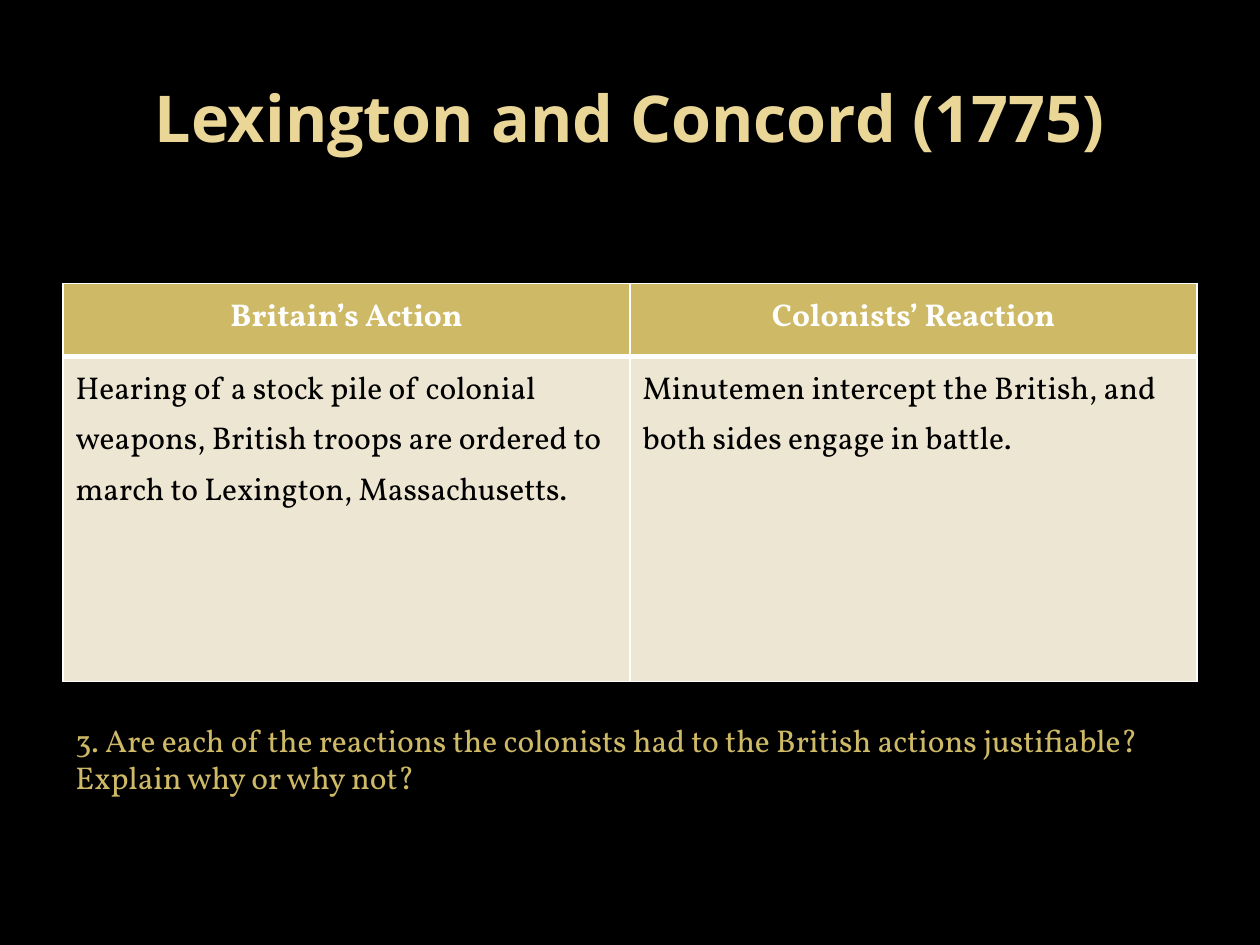
"""Build the Lexington and Concord slide."""
from lxml.etree import SubElement
from pptx import Presentation
from pptx.dml.color import RGBColor as RGB
from pptx.enum.text import MSO_ANCHOR as Anchor, PP_ALIGN as Align
from pptx.oxml.ns import qn
from pptx.util import Inches, Pt

HUES = {"back": "000000", "title": "EAD696", "gold": "CEB966",
        "cream": "EDE6D3", "white": "FFFFFF", "ink": "000000"}


def write(frame, text, size=18, font="Vollkorn", hue="ink", bold=False,
          align=Align.LEFT, space=1.0):
    frame.word_wrap = True
    para = frame.paragraphs[0]
    para.alignment = align
    para.line_spacing = space
    run = para.add_run()
    run.text = text
    run.font.size = Pt(size)
    run.font.name = font
    run.font.bold = bold
    run.font.color.rgb = RGB.from_string(HUES[hue])


def edge(cell, side, width):
    line = SubElement(cell._tc.get_or_add_tcPr(), qn("a:" + side), w=str(Pt(width)))
    fill = SubElement(line, qn("a:solidFill"))
    SubElement(fill, qn("a:srgbClr"), val=HUES["white"])


deck = Presentation()
deck.slide_width, deck.slide_height = Inches(10), Inches(7.5)
wide, high = deck.slide_width, deck.slide_height
left, span = int(wide * 0.05), int(wide * 0.9)

slide = deck.slides.add_slide(deck.slide_layouts[5])
slide.background.fill.solid()
slide.background.fill.fore_color.rgb = RGB.from_string(HUES["back"])

title = slide.shapes.title
title.left, title.top = left, int(high * 0.04)
title.width, title.height = span, Inches(1.25)
title.text_frame.vertical_anchor = Anchor.MIDDLE
write(title.text_frame, "Lexington and Concord (1775)", size=36.9,
      font="Open Sans", hue="title", bold=True, align=Align.CENTER)

rows = [
    (0.58, "gold", 3, {"hue": "white", "bold": True, "align": Align.CENTER},
     ("Britain’s Action", "Colonists’ Reaction")),
    (2.58, "cream", 1, {},
     ("Hearing of a stock pile of colonial weapons, British troops are "
      "ordered to march to Lexington, Massachusetts.",
      "Minutemen intercept the British, and both sides engage in battle.")),
]
tall = Inches(sum(row[0] for row in rows))
grid = slide.shapes.add_table(2, 2, left, int(high * 0.3), span, tall).table
for r, (height, fill, base, style, texts) in enumerate(rows):
    grid.rows[r].height = Inches(height)
    for c, text in enumerate(texts):
        cell = grid.cell(r, c)
        write(cell.text_frame, text, space=1.15, **style)
        top = rows[r - 1][2] if r else 1
        for side, width in (("lnL", 1), ("lnR", 1), ("lnT", top), ("lnB", base)):
            edge(cell, side, width)
        cell.fill.solid()
        cell.fill.fore_color.rgb = RGB.from_string(HUES[fill])

box = slide.shapes.add_textbox(left, Inches(5.67), span, Inches(0.71))
write(box.text_frame, "3. Are each of the reactions the colonists had to the "
      "British actions justifiable? Explain why or why not?", hue="gold")

deck.save("out.pptx")
